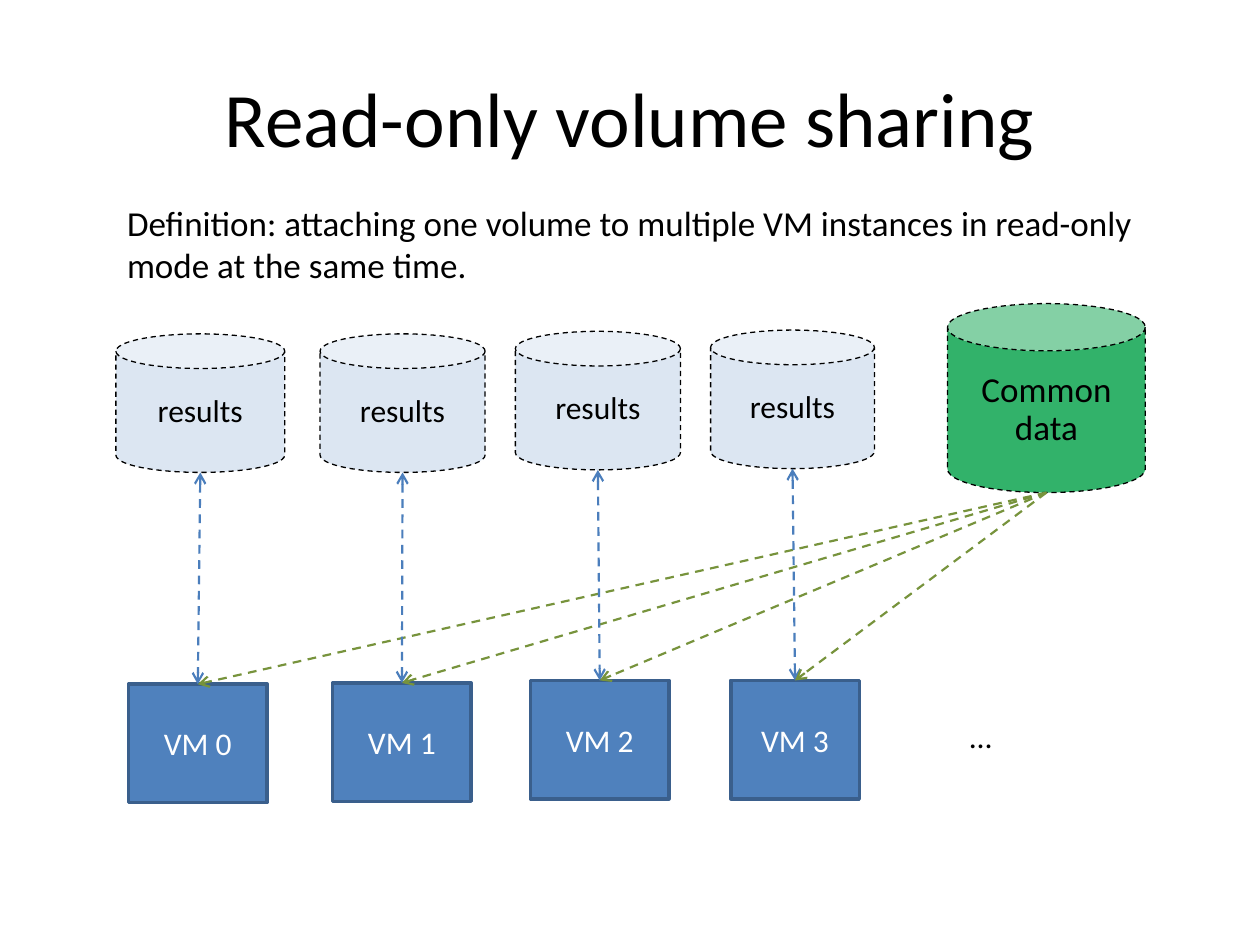
from lxml.etree import SubElement
from pptx import Presentation
from pptx.dml.color import RGBColor
from pptx.enum.dml import MSO_LINE
from pptx.enum.shapes import MSO_CONNECTOR, MSO_SHAPE
from pptx.enum.text import MSO_ANCHOR, PP_ALIGN
from pptx.oxml.ns import qn
from pptx.util import Inches, Pt

COLOURS = {
    "black": "000000", "white": "FFFFFF",
    "vm": "4F81BD", "vm_edge": "3A5F8C",
    "results": "DCE6F2", "common": "32B26A",
    "results_link": "4B7EBC", "common_link": "77933C",
}
BLACK_TEXT = {"name": "Calibri", "colour": "black"}
WHITE_TEXT = {"name": "Calibri", "colour": "white"}
DASHED_EDGE = {"colour": "black", "width": Pt(0.75), "dash_style": MSO_LINE.DASH}
SOLID_EDGE = {"colour": "vm_edge", "width": Pt(2)}


def apply_format(target, settings):
    """Set attributes from a dict; "colour" is a key of COLOURS."""
    for key, value in settings.items():
        if key == "colour":
            target.color.rgb = RGBColor.from_string(COLOURS[value])
        else:
            setattr(target, key, value)


def add_item(kind, box, text, size, font, align=PP_ALIGN.CENTER,
             anchor=MSO_ANCHOR.MIDDLE, fill=None, edge=None, spacing=None):
    """Add a text box (kind None) or a filled preset shape with its text."""
    place = [Inches(value) for value in box]
    if kind is None:
        item = slide.shapes.add_textbox(*place)
    else:
        item = slide.shapes.add_shape(kind, *place)
        item.shadow.inherit = False
        item.fill.solid()
        item.fill.fore_color.rgb = RGBColor.from_string(COLOURS[fill])
        apply_format(item.line, edge)
    apply_format(item.text_frame, {"word_wrap": True, "vertical_anchor": anchor})
    paragraph = item.text_frame.paragraphs[0]
    paragraph.text = text
    apply_format(paragraph, {"alignment": align, "line_spacing": spacing})
    apply_format(paragraph.runs[0].font, {**font, "size": Pt(size)})
    return item


prs = Presentation()
prs.slide_width, prs.slide_height = Inches(10), Inches(7.5)
slide = prs.slides.add_slide(prs.slide_layouts[6])

add_item(None, (0.5, 0.3, 9, 1.25), "Read-only volume sharing", 44, BLACK_TEXT)
add_item(None, (0.91, 1.55, 8.58, 0.77),
         "Definition: attaching one volume to multiple VM instances in read-only "
         "mode at the same time.", 20, BLACK_TEXT, PP_ALIGN.LEFT, MSO_ANCHOR.TOP)
add_item(None, (7.6, 5.64, 0.94, 0.4), "…", 18, BLACK_TEXT,
         PP_ALIGN.LEFT, MSO_ANCHOR.TOP)

common_data = add_item(MSO_SHAPE.CAN, (7.52, 2.41, 1.57, 1.5), "Common data", 20,
                       BLACK_TEXT, fill="common", edge=DASHED_EDGE, spacing=0.9)

# Left, top and width of each results volume, then of the VM below it
columns = [
    ((0.92, 2.65, 1.34), (1.02, 5.43, 1.1)),
    ((2.54, 2.65, 1.31), (2.64, 5.42, 1.1)),
    ((4.09, 2.63, 1.31), (4.21, 5.4, 1.1)),
    ((5.64, 2.62, 1.3), (5.8, 5.4, 1.02)),
]
links = []
for number, (volume_box, vm_box) in enumerate(columns):
    results = add_item(MSO_SHAPE.CAN, (*volume_box, 1.1), "results", 18, BLACK_TEXT,
                       fill="results", edge=DASHED_EDGE, spacing=0.9)
    vm = add_item(MSO_SHAPE.RECTANGLE, (*vm_box, 0.94), f"VM {number}", 18,
                  WHITE_TEXT, fill="vm", edge=SOLID_EDGE)
    links.append((results, vm, "results_link", ("headEnd", "tailEnd")))
    links.append((common_data, vm, "common_link", ("tailEnd",)))

for volume, vm, colour, arrow_ends in links:
    link = slide.shapes.add_connector(
        MSO_CONNECTOR.STRAIGHT,
        volume.left + volume.width // 2, volume.top + volume.height,
        vm.left + vm.width // 2, vm.top)
    link.end_connect(vm, 0)
    apply_format(link.line, {"colour": colour, "width": Pt(1.25),
                             "dash_style": MSO_LINE.DASH})
    outline = link.line._get_or_add_ln()
    for end in arrow_ends:
        SubElement(outline, qn(f"a:{end}"), type="arrow")
    SubElement(link._element.spPr, qn("a:effectLst"))

prs.save("out.pptx")
